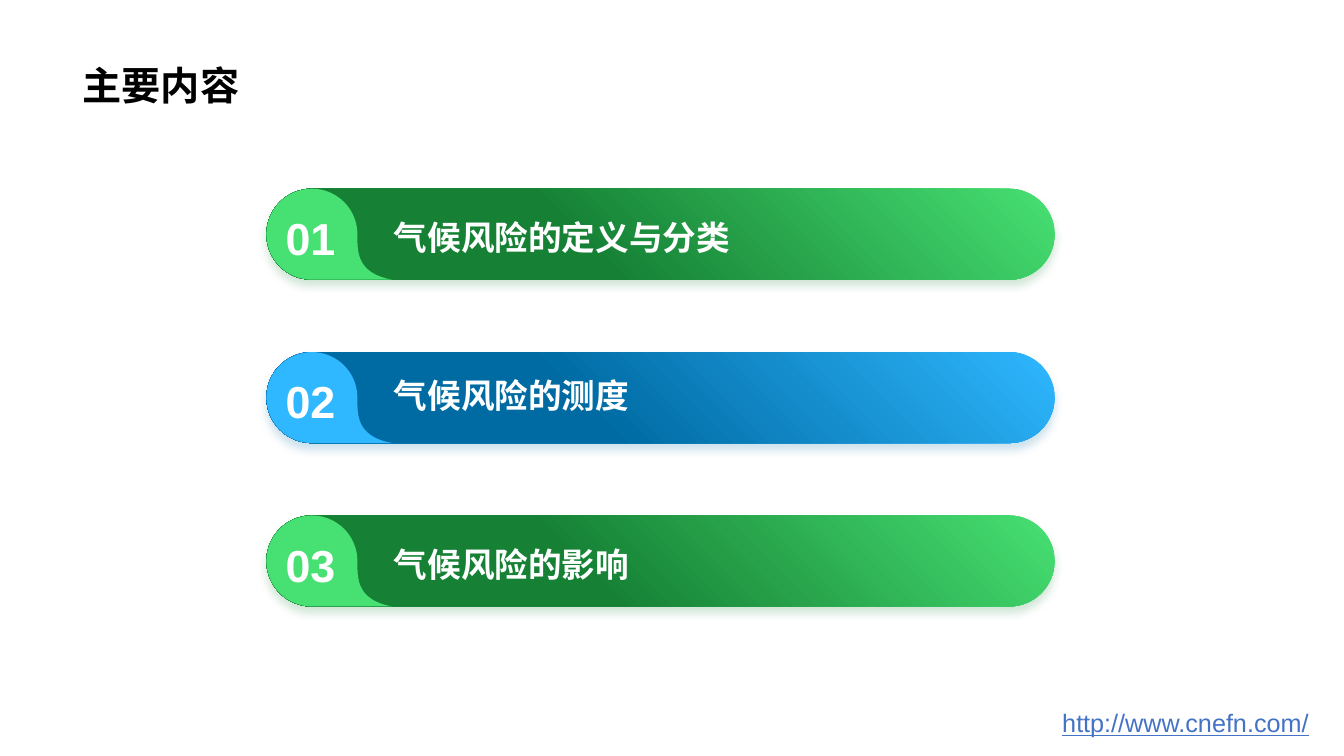
import math

from lxml import etree
from pptx import Presentation
from pptx.dml.color import RGBColor
from pptx.enum.shapes import MSO_SHAPE
from pptx.enum.text import MSO_ANCHOR, PP_ALIGN
from pptx.oxml.ns import qn
from pptx.util import Pt

ROUNDED = MSO_SHAPE.ROUNDED_RECTANGLE
LEFT, CENTER = PP_ALIGN.LEFT, PP_ALIGN.CENTER
TOP, BOTTOM = MSO_ANCHOR.TOP, MSO_ANCHOR.BOTTOM

BLACK = RGBColor(0x00, 0x00, 0x00)
WHITE = RGBColor(0xFF, 0xFF, 0xFF)
LINK_BLUE = RGBColor(0x44, 0x72, 0xC4)
LIGHT_GREEN = RGBColor(0x47, 0xE0, 0x73)
DARK_GREEN = RGBColor(0x16, 0x81, 0x35)
LIGHT_BLUE = RGBColor(0x2F, 0xB7, 0xFF)
DARK_BLUE = RGBColor(0x00, 0x6B, 0xA3)

BAR_LEFT, BAR_TOP, BAR_STEP = 190.3, 134.8, 116.7
BAR_WIDTH, BAR_HEIGHT = 563, 65


def add_text(text, left, top, width, height, color, anchor=TOP, align=LEFT, wrap=True, **font):
    tf = s.shapes.add_textbox(Pt(left), Pt(top), Pt(width), Pt(height)).text_frame
    tf.word_wrap = wrap
    tf.vertical_anchor = anchor
    p = tf.paragraphs[0]
    p.alignment = align
    r = p.add_run()
    r.text = text
    r.font.color.rgb = color
    for name, value in {"name": "Arial", **font}.items():
        setattr(r.font, name, value)


def add_soft_shadow(sp, color):
    sp.shadow.inherit = False
    effects = sp._element.spPr.find(qn("a:effectLst"))
    shadow = etree.SubElement(effects, qn("a:outerShdw"), blurRad=str(Pt(6)), dist=str(Pt(4)),
                              dir="5400000", algn="t", rotWithShape="0")
    clr = etree.SubElement(shadow, qn("a:srgbClr"), val=str(color))
    etree.SubElement(clr, qn("a:alpha"), val="20000")


prs = Presentation()
prs.slide_width, prs.slide_height = Pt(960), Pt(540)
s = prs.slides.add_slide(prs.slide_layouts[6])

add_text("主要内容", 52, 0, 855, 80.6, BLACK, anchor=BOTTOM, size=Pt(28), bold=True)
add_text("http://www.cnefn.com/", 751.7, 501.8, 197.3, 29, LINK_BLUE, size=Pt(18), underline=True)

# Badge outline: three quarters of a circle, then a curved tail along the bar's lower edge
radius = BAR_HEIGHT / 2
badge = [(radius + radius * math.cos(math.radians(a)), radius + radius * math.sin(math.radians(a)))
         for a in range(90, 361, 5)]
tail = [(65, 34), (65, 45.5), (65.5, 57), (82, 63)]
for step in range(17):
    t = step / 16
    weights = [(1 - t) ** 3, 3 * t * (1 - t) ** 2, 3 * t ** 2 * (1 - t), t ** 3]
    badge.append(tuple(sum(w * pt[axis] for w, pt in zip(weights, tail)) for axis in (0, 1)))
badge += [(86, 64.2), (90, BAR_HEIGHT)]

# Topic, its offset inside the bar, light and dark colour
topics = [
    ("气候风险的定义与分类", 16.6, LIGHT_GREEN, DARK_GREEN),
    ("气候风险的测度", 13, LIGHT_BLUE, DARK_BLUE),
    ("气候风险的影响", 16.6, LIGHT_GREEN, DARK_GREEN),
]
for i, (topic, offset, light, dark) in enumerate(topics):
    top = BAR_TOP + i * BAR_STEP

    bar = s.shapes.add_shape(ROUNDED, Pt(BAR_LEFT), Pt(top), Pt(BAR_WIDTH), Pt(BAR_HEIGHT))
    bar.adjustments[0] = 0.5
    bar.line.fill.background()
    bar.fill.gradient()
    bar.fill.gradient_angle = 225
    for stop, color, position in zip(bar.fill.gradient_stops, (light, dark), (0, 0.6)):
        stop.color.rgb = color
        stop.position = position
    add_soft_shadow(bar, dark)

    points = [(Pt(BAR_LEFT + x), Pt(top + y)) for x, y in badge]
    outline = s.shapes.build_freeform(*points[0])
    outline.add_line_segments(points[1:], close=True)
    sp = outline.convert_to_shape()
    sp.shadow.inherit = False
    sp.fill.solid()
    sp.fill.fore_color.rgb = light
    sp.line.fill.background()

    add_text(topic, 274.3, top + offset, 415, 36, WHITE, size=Pt(24), bold=True)
    add_text(f"{i + 1:02}", 196.6, top + 12, 50.4, 46, WHITE, align=CENTER, wrap=False,
             size=Pt(32), bold=True)

prs.save("out.pptx")
